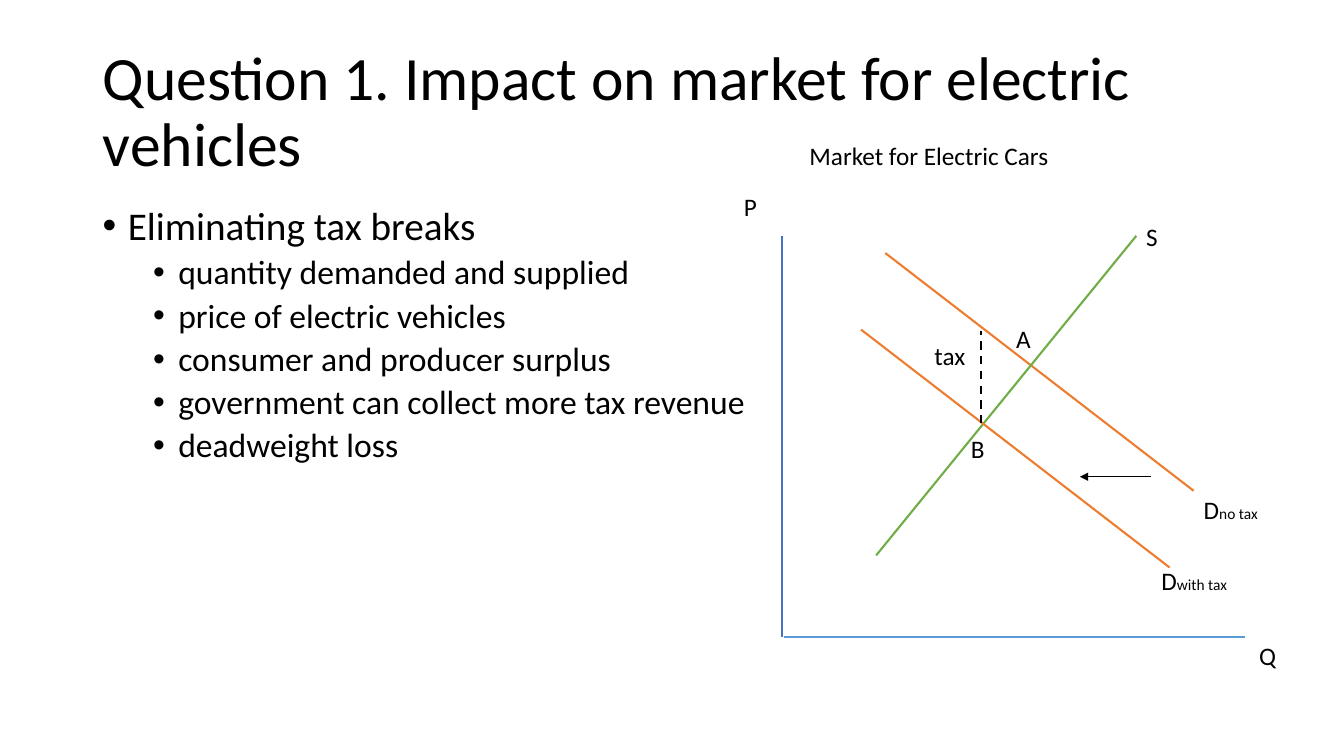
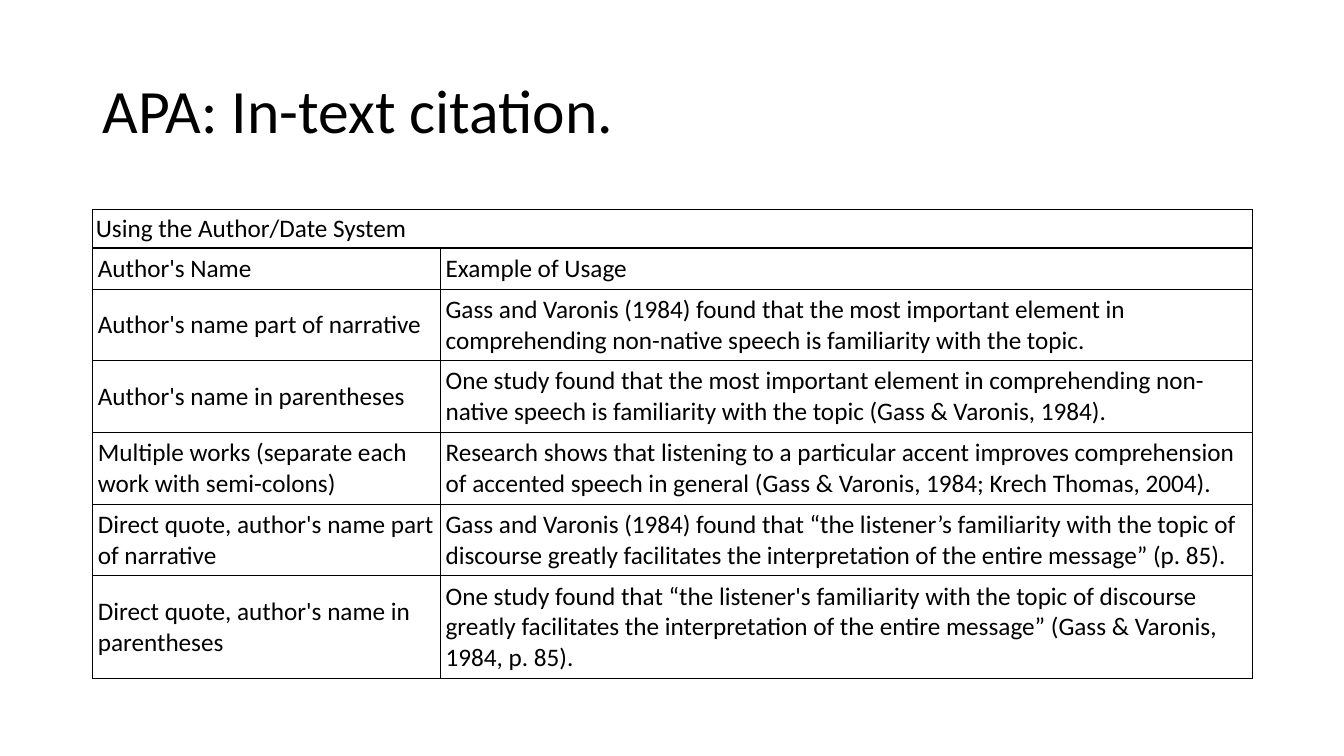
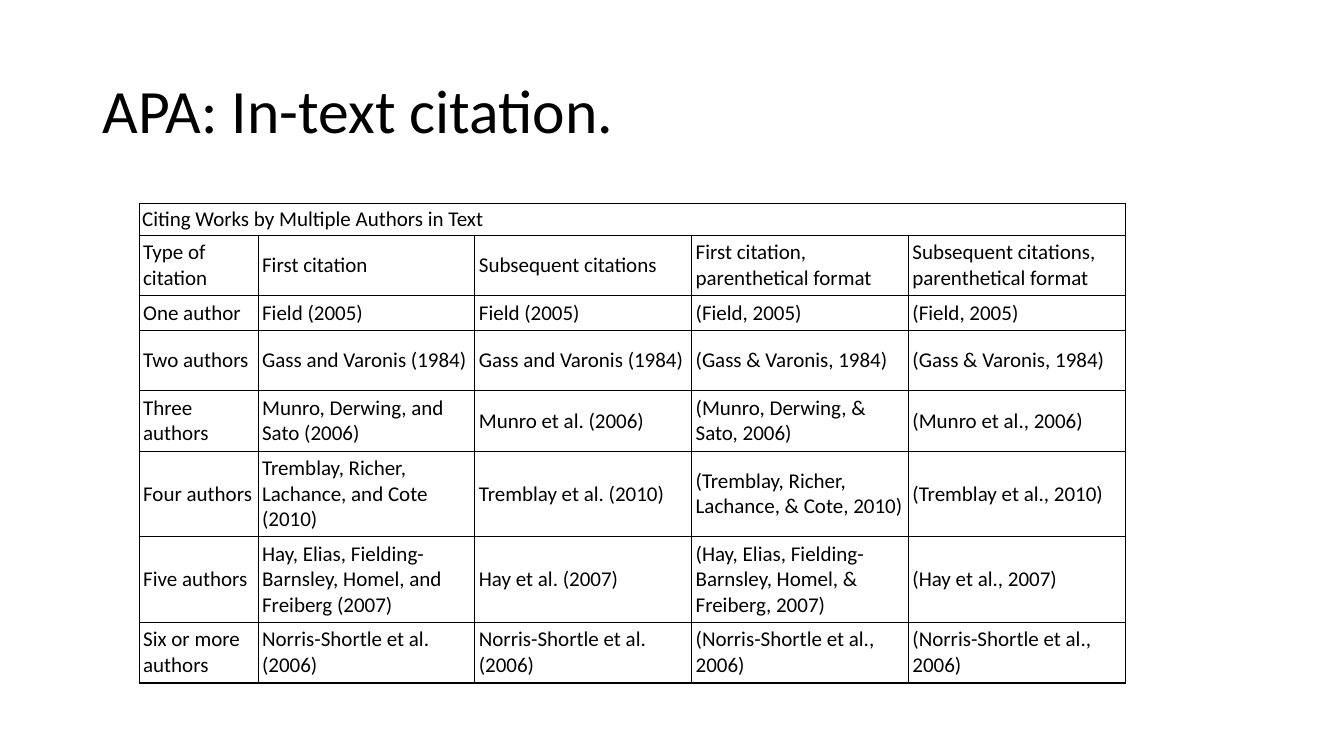
from dataclasses import dataclass

from lxml import etree
from pptx import Presentation
from pptx.dml.color import RGBColor
from pptx.enum.dml import MSO_LINE
from pptx.enum.shapes import MSO_CONNECTOR
from pptx.enum.text import MSO_ANCHOR, MSO_AUTO_SIZE, PP_ALIGN
from pptx.oxml.ns import qn
from pptx.util import Inches, Pt

STRAIGHT = MSO_CONNECTOR.STRAIGHT
DASH = MSO_LINE.DASH
MIDDLE = MSO_ANCHOR.MIDDLE
LEFT = PP_ALIGN.LEFT
NO_AUTOFIT = MSO_AUTO_SIZE.NONE
FIT_SHAPE = MSO_AUTO_SIZE.SHAPE_TO_FIT_TEXT
TITLE_ONLY = 5


@dataclass(frozen=True)
class Theme:
    font: str = "Calibri"
    text: str = "000000"
    price_axis: str = "4472C4"
    quantity_axis: str = "5B9BD5"
    demand: str = "ED7D31"
    supply: str = "70AD47"
    title_size: float = 44
    bullet_sizes: tuple = (28, 24)
    label_size: float = 18
    subscript_size: float = 11
    curve_width: float = 1.5
    arrow_width: float = 0.5
    border_width: float = 1


THEME = Theme()
SLIDE_SIZE = (13.33, 7.5)
MARGIN = 0.92
CONTENT_WIDTH = 11.5
TITLE_BOX = (MARGIN, 0.4, CONTENT_WIDTH, 1.45)
BODY_BOX = (MARGIN, 2, CONTENT_WIDTH, 4.76)

MARKET_TITLE = "Question 1. Impact on market for electric vehicles"
CITATION_TITLE = "APA: In-text citation."

# (level, text)
BULLETS = [
    (0, "Eliminating tax breaks"),
    (1, "quantity demanded and supplied"),
    (1, "price of electric vehicles"),
    (1, "consumer and producer surplus"),
    (1, "government can collect more tax revenue"),
    (1, "deadweight loss"),
]
# One entry per bullet level
BULLET_INDENTS = (0.25, 0.75)
BULLET_HANG = 0.25
BULLET_SPACES = (10, 5)

# Lines are (start, end, colour)
DEMAND_START, DEMAND_END = (8.78, 2.51), (11.84, 4.87)
TAX_SHIFT = (-0.24, 0.76)
CURVES = [
    ((7.76, 2.34), (7.76, 6.32), THEME.price_axis),
    ((7.78, 6.32), (12.35, 6.32), THEME.quantity_axis),
    (DEMAND_START, DEMAND_END, THEME.demand),
    ((8.69, 5.51), (11.27, 2.34), THEME.supply),
    (
        tuple(map(sum, zip(DEMAND_START, TAX_SHIFT))),
        tuple(map(sum, zip(DEMAND_END, TAX_SHIFT))),
        THEME.demand,
    ),
]
SHIFT_ARROW = ((11.42, 4.73), (10.71, 4.73), THEME.text)
TAX_GAP = ((9.73, 4.2), (9.73, 3.28), THEME.text)

# (text, subscript, left, top, width)
LABEL_HEIGHT = 0.4
LABELS = [
    ("A", "", 9.98, 3.16, 0.41),
    ("B", "", 9.53, 4.25, 0.41),
    ("S", "", 11.27, 2.15, 0.76),
    ("D", "no tax", 11.84, 4.85, 0.9),
    ("D", "with tax", 11.42, 5.56, 0.9),
    ("P", "", 7.28, 1.85, 0.5),
    ("Q", "", 12.39, 6.3, 0.5),
    ("tax", "", 9.17, 3.33, 0.66),
    ("Market for Electric Cars", "", 7.93, 1.34, 4.1),
]

AUTHOR_DATE = {
    "caption": "Using the Author/Date System",
    "position": (MARGIN, 2.08),
    "columns": [CONTENT_WIDTH * 0.3, CONTENT_WIDTH * 0.7],
    "row_heights": [0.38, 0.41] + [0.71] * 4 + [1.02],
    "size": 18,
    "inset": 0.05,
    "rows": [
        ("Author's Name", "Example of Usage"),
        ("Author's name part of narrative",
         "Gass and Varonis (1984) found that the most important element in "
         "comprehending non-native speech is familiarity with the topic."),
        ("Author's name in parentheses",
         "One study found that the most important element in comprehending "
         "non-native speech is familiarity with the topic (Gass & Varonis, 1984)."),
        ("Multiple works (separate each work with semi-colons)",
         "Research shows that listening to a particular accent improves "
         "comprehension of accented speech in general (Gass & Varonis, 1984; "
         "Krech Thomas, 2004)."),
        ("Direct quote, author's name part of narrative",
         "Gass and Varonis (1984) found that “the listener’s familiarity with "
         "the topic of discourse greatly facilitates the interpretation of the "
         "entire message” (p. 85)."),
        ("Direct quote, author's name in parentheses",
         "One study found that “the listener's familiarity with the topic of "
         "discourse greatly facilitates the interpretation of the entire "
         "message” (Gass & Varonis, 1984, p. 85)."),
    ],
}

MULTIPLE_AUTHORS = {
    "caption": "Citing Works by Multiple Authors in Text",
    "position": (1.38, 2.02),
    "columns": [1.18] + [2.15] * 4,
    "row_heights": [0.31, 0.6, 0.34, 0.6, 0.6, 0.85, 0.85, 0.6],
    "size": 15,
    "inset": 0.04,
    "rows": [
        ("Type of citation", "First citation", "Subsequent citations",
         "First citation, parenthetical format",
         "Subsequent citations, parenthetical format"),
        ("One author", "Field (2005)", "Field (2005)",
         "(Field, 2005)", "(Field, 2005)"),
        ("Two authors", "Gass and Varonis (1984)", "Gass and Varonis (1984)",
         "(Gass & Varonis, 1984)", "(Gass & Varonis, 1984)"),
        ("Three authors", "Munro, Derwing, and Sato (2006)",
         "Munro et al. (2006)", "(Munro, Derwing, & Sato, 2006)",
         "(Munro et al., 2006)"),
        ("Four authors", "Tremblay, Richer, Lachance, and Cote (2010)",
         "Tremblay et al. (2010)", "(Tremblay, Richer, Lachance, & Cote, 2010)",
         "(Tremblay et al., 2010)"),
        ("Five authors",
         "Hay, Elias, Fielding-Barnsley, Homel, and Freiberg (2007)",
         "Hay et al. (2007)",
         "(Hay, Elias, Fielding-Barnsley, Homel, & Freiberg, 2007)",
         "(Hay et al., 2007)"),
        ("Six or more authors", "Norris-Shortle et al. (2006)",
         "Norris-Shortle et al. (2006)", "(Norris-Shortle et al., 2006)",
         "(Norris-Shortle et al., 2006)"),
    ],
}
CAPTION_INSET = 0.03


def inches(values):
    return [Inches(value) for value in values]


def style_font(font, size):
    font.name = THEME.font
    font.size = Pt(size)
    font.color.rgb = RGBColor.from_string(THEME.text)


def add_titled_slide(presentation, text):
    slide = presentation.slides.add_slide(presentation.slide_layouts[TITLE_ONLY])
    title = slide.shapes.title
    title.left, title.top, title.width, title.height = inches(TITLE_BOX)
    frame = title.text_frame
    frame.text = text
    frame.auto_size = NO_AUTOFIT
    frame.vertical_anchor = MIDDLE
    paragraph = frame.paragraphs[0]
    paragraph.alignment = LEFT
    paragraph.line_spacing = 0.9
    style_font(paragraph.font, THEME.title_size)
    return slide


def add_text_frame(slide, box):
    frame = slide.shapes.add_textbox(*inches(box)).text_frame
    frame.word_wrap = True
    return frame


def add_bullets(slide):
    frame = add_text_frame(slide, BODY_BOX)
    for index, (level, text) in enumerate(BULLETS):
        paragraph = frame.add_paragraph() if index else frame.paragraphs[0]
        paragraph.text = text
        paragraph.level = level
        paragraph.line_spacing = 0.9
        if index:
            paragraph.space_before = Pt(BULLET_SPACES[level])
        properties = paragraph._p.get_or_add_pPr()
        properties.set("marL", str(Inches(BULLET_INDENTS[level])))
        properties.set("indent", str(-Inches(BULLET_HANG)))
        etree.SubElement(properties, qn("a:buFont"), typeface="Arial")
        etree.SubElement(properties, qn("a:buChar"), char="•")
        style_font(paragraph.font, THEME.bullet_sizes[level])


def add_line(slide, start, end, color, width=THEME.curve_width):
    connector = slide.shapes.add_connector(STRAIGHT, *inches(start + end))
    connector.line.color.rgb = RGBColor.from_string(color)
    connector.line.width = Pt(width)
    etree.SubElement(connector._element.spPr, qn("a:effectLst"))
    return connector


def add_label(slide, text, subscript, left, top, width):
    frame = add_text_frame(slide, (left, top, width, LABEL_HEIGHT))
    frame.auto_size = FIT_SHAPE
    paragraph = frame.paragraphs[0]
    paragraph.text = text
    style_font(paragraph.font, THEME.label_size)
    if subscript:
        run = paragraph.add_run()
        run.text = subscript
        run.font.size = Pt(THEME.subscript_size)


def add_market_graph(slide):
    for curve in CURVES:
        add_line(slide, *curve)
    arrow = add_line(slide, *SHIFT_ARROW, THEME.arrow_width)
    etree.SubElement(arrow.line._get_or_add_ln(), qn("a:tailEnd"), type="triangle")
    add_line(slide, *TAX_GAP).line.dash_style = DASH
    for label in LABELS:
        add_label(slide, *label)


def add_borders(cell):
    properties = cell._tc.get_or_add_tcPr()
    for side in ("lnL", "lnR", "lnT", "lnB"):
        line = etree.SubElement(properties, qn("a:" + side),
                                w=str(Pt(THEME.border_width)))
        fill = etree.SubElement(line, qn("a:solidFill"))
        etree.SubElement(fill, qn("a:srgbClr"), val=THEME.text)


def format_cell(cell, text, size, inset):
    add_borders(cell)
    cell.fill.background()
    cell.vertical_anchor = MIDDLE
    cell.margin_left = cell.margin_right = Inches(inset)
    cell.margin_top = cell.margin_bottom = Inches(inset)
    cell.text = text
    style_font(cell.text_frame.paragraphs[0].font, size)


def add_citation_table(slide, content):
    columns, heights = content["columns"], content["row_heights"]
    box = (*content["position"], sum(columns), sum(heights))
    table = slide.shapes.add_table(len(heights), len(columns), *inches(box)).table
    table.first_row = table.horz_banding = False
    for column, width in zip(table.columns, columns):
        column.width = Inches(width)
    for row, height in zip(table.rows, heights):
        row.height = Inches(height)

    caption_row = [content["caption"]] + [""] * (len(columns) - 1)
    for row_index, texts in enumerate([caption_row] + content["rows"]):
        inset = content["inset"] if row_index else CAPTION_INSET
        for column_index, text in enumerate(texts):
            format_cell(table.cell(row_index, column_index), text,
                        content["size"], inset)
    table.cell(0, 0).merge(table.cell(0, len(columns) - 1))


def main():
    presentation = Presentation()
    presentation.slide_width, presentation.slide_height = inches(SLIDE_SIZE)

    market_slide = add_titled_slide(presentation, MARKET_TITLE)
    add_bullets(market_slide)
    add_market_graph(market_slide)

    for content in (AUTHOR_DATE, MULTIPLE_AUTHORS):
        add_citation_table(add_titled_slide(presentation, CITATION_TITLE), content)

    presentation.save("out.pptx")


if __name__ == "__main__":
    main()
